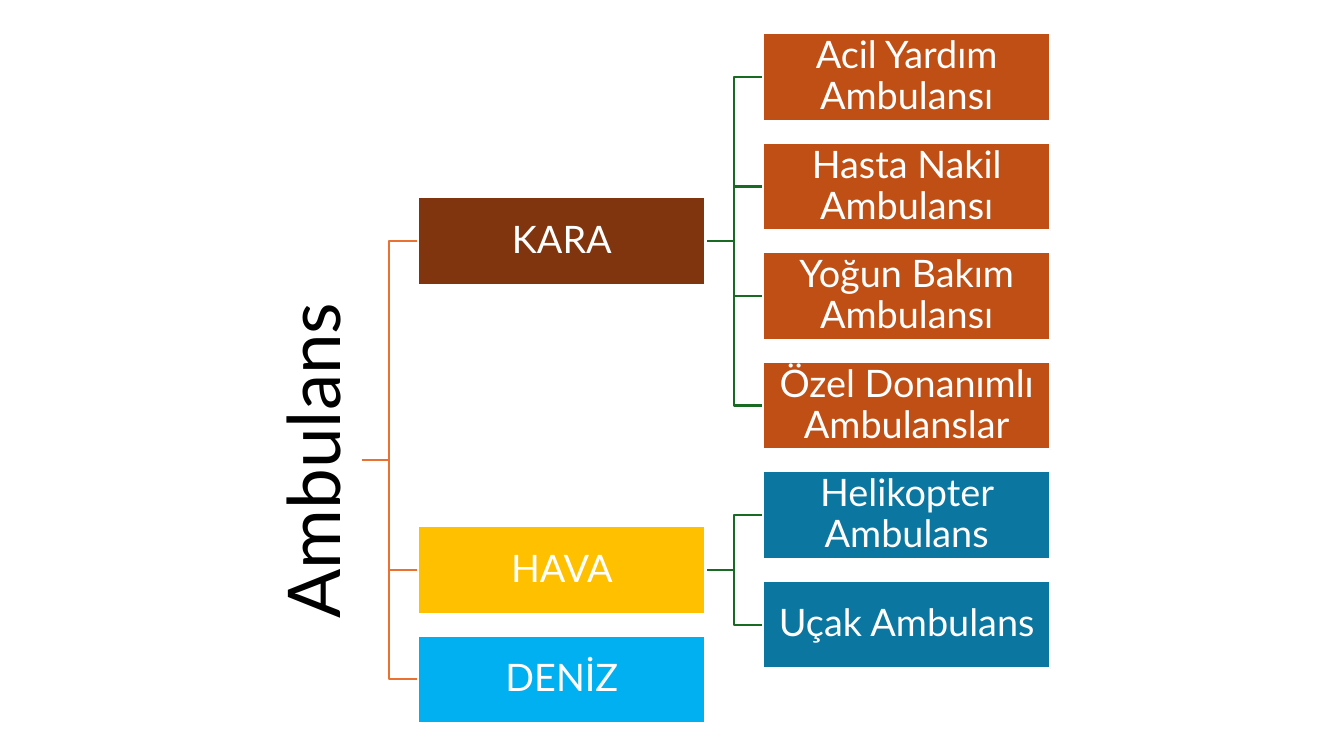
import pptx
import pptx.util
import pptx.dml.color
import pptx.enum.shapes
import pptx.enum.text

Cm = pptx.util.Cm
Pt = pptx.util.Pt
RGBColor = pptx.dml.color.RGBColor

WHITE = RGBColor(0xFF, 0xFF, 0xFF)
BLACK = RGBColor(0x00, 0x00, 0x00)
BROWN = RGBColor(0x80, 0x35, 0x0E)
RUST = RGBColor(0xC0, 0x4F, 0x15)
GOLD = RGBColor(0xFF, 0xC0, 0x00)
TEAL = RGBColor(0x0B, 0x76, 0xA0)
SKY = RGBColor(0x00, 0xB0, 0xF0)
ORANGE = RGBColor(0xE9, 0x71, 0x32)
GREEN = RGBColor(0x19, 0x6B, 0x24)

# Grid in centimetres: rows are counted by box centre
WIDE, HIGH, GAP = 7.24, 2.21, 1.45
FIRST, PITCH = 1.94, 2.76
MID = 10.54
LAST = MID + WIDE + GAP
ROOT_ROW, ROOT_WIDE = 3.5, 11.63

# Branch: name, row, fill, leaf fill, leaves as (name, row)
BRANCHES = [
    ("KARA", 1.5, BROWN, RUST, [
        ("Acil Yardım Ambulansı", 0),
        ("Hasta Nakil Ambulansı", 1),
        ("Yoğun Bakım Ambulansı", 2),
        ("Özel Donanımlı Ambulanslar", 3),
    ]),
    ("HAVA", 4.5, GOLD, TEAL, [
        ("Helikopter Ambulans", 4),
        ("Uçak Ambulans", 5),
    ]),
    ("DENİZ", 5.5, SKY, None, []),
]

deck = pptx.Presentation()
deck.slide_width = Cm(33.87)
deck.slide_height = Cm(19.05)
slide = deck.slides.add_slide(deck.slide_layouts[6])


def add_link(right, start, end, color):
    """Draw an elbow from row start to row end, ending at the column edge."""
    left, bend = right - GAP, right - GAP / 2
    top, low = FIRST + start * PITCH, FIRST + end * PITCH
    pen = slide.shapes.build_freeform(Cm(left), Cm(top))
    pen.add_line_segments(
        [(Cm(bend), Cm(top)), (Cm(bend), Cm(low)), (Cm(right), Cm(low))],
        close=False)
    link = pen.convert_to_shape()
    link.shadow.inherit = False
    link.fill.background()
    link.line.color.rgb = color
    link.line.width = Pt(1.5)


def add_box(text, left, row, fill, wide=WIDE, size=27, ink=WHITE, inset=0.05):
    """Draw a labelled box centred on a row."""
    box = slide.shapes.add_shape(
        pptx.enum.shapes.MSO_SHAPE.RECTANGLE, Cm(left),
        Cm(FIRST + row * PITCH - HIGH / 2), Cm(wide), Cm(HIGH))
    box.shadow.inherit = False
    box.fill.solid()
    box.fill.fore_color.rgb = fill
    box.line.color.rgb = WHITE
    box.line.width = Pt(1.5)
    frame = box.text_frame
    frame.word_wrap = True
    frame.vertical_anchor = pptx.enum.text.MSO_ANCHOR.MIDDLE
    frame.margin_left = frame.margin_right = Cm(inset)
    frame.margin_top = frame.margin_bottom = Cm(inset)
    para = frame.paragraphs[0]
    para.alignment = pptx.enum.text.PP_ALIGN.CENTER
    para.line_spacing = 0.9
    run = para.add_run()
    run.text = text
    run.font.name = "Lato"
    run.font.size = Pt(size)
    run.font.color.rgb = ink
    return box


# Links behind the boxes
for name, row, fill, tint, leaves in BRANCHES:
    add_link(MID, ROOT_ROW, row, ORANGE)
    for leaf, spot in leaves:
        add_link(LAST, row, spot, GREEN)

# Root, turned to read upwards
center = MID - GAP - HIGH / 2
root = add_box("Ambulans", center - ROOT_WIDE / 2, ROOT_ROW, WHITE,
               wide=ROOT_WIDE, size=52, ink=BLACK, inset=0.1)
root.rotation = 270

# Branches and their leaves
for name, row, fill, tint, leaves in BRANCHES:
    add_box(name, MID, row, fill)
    for leaf, spot in leaves:
        add_box(leaf, LAST, spot, tint)

deck.save("out.pptx")
